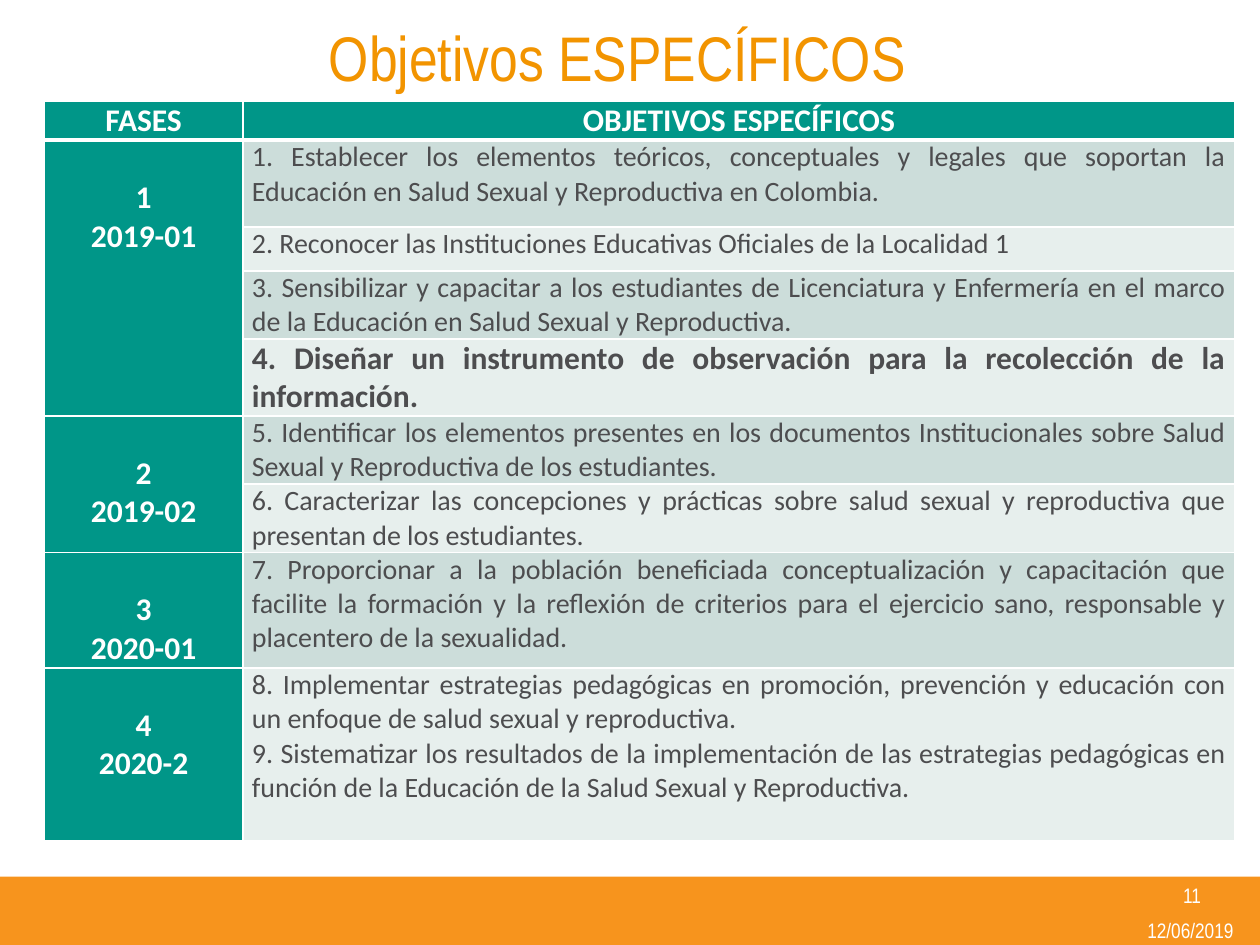
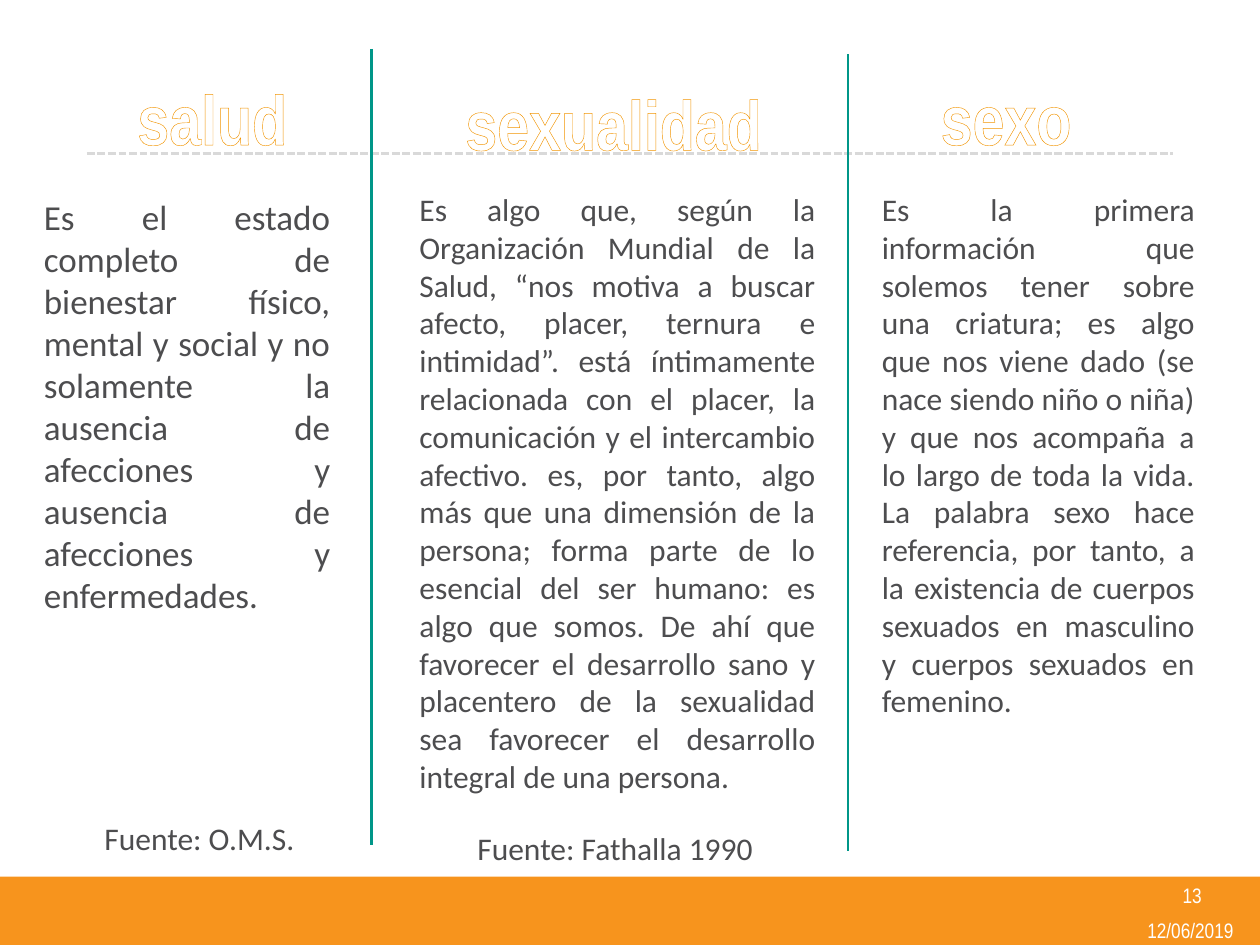
from lxml import etree
from pptx import Presentation
from pptx.dml.color import RGBColor
from pptx.enum.dml import MSO_LINE
from pptx.enum.shapes import MSO_CONNECTOR, MSO_SHAPE
from pptx.enum.text import MSO_ANCHOR, MSO_AUTO_SIZE, PP_ALIGN as Align
from pptx.oxml.ns import qn
from pptx.util import Pt

COLORS = {
    "orange": "F7941D",
    "title": "F29400",
    "teal": "009688",
    "dark_row": "CCDDDA",
    "light_row": "E7EFED",
    "text": "4D4D4F",
    "rule": "D9D9D9",
    "white": "FFFFFF",
}
TITLE_FONT = "Arial Narrow"
BODY_FONT = "Calibri"
DATE = "12/06/2019"
LINE_18 = 22  # height of one 18 pt line

PHASES = [
    (["1", "2019-01"], 4),
    (["2", "2019-02"], 2),
    (["3", "2020-01"], 1),
    (["4", "2020-2"], 1),
]
# Row height, paragraphs
OBJECTIVES = [
    (49.7, ["1. Establecer los elementos teóricos, conceptuales y legales que soportan la "
            "Educación en Salud Sexual y Reproductiva en Colombia."]),
    (25, ["2. Reconocer las Instituciones Educativas Oficiales de la Localidad 1"]),
    (39, ["3. Sensibilizar y capacitar a los estudiantes de Licenciatura y Enfermería en el "
          "marco de la Educación en Salud Sexual y Reproductiva."]),
    (44, ["4. Diseñar un instrumento de observación para la recolección de la información."]),
    (39, ["5. Identificar los elementos presentes en los documentos Institucionales sobre "
          "Salud Sexual y Reproductiva de los estudiantes."]),
    (39, ["6. Caracterizar las concepciones y prácticas sobre salud sexual y reproductiva que "
          "presentan de los estudiantes."]),
    (66, ["7. Proporcionar a la población beneficiada conceptualización y capacitación que "
          "facilite la formación y la reflexión de criterios para el ejercicio sano, "
          "responsable y placentero de la sexualidad."]),
    (99, ["8. Implementar estrategias pedagógicas en promoción, prevención y educación con un "
          "enfoque de salud sexual y reproductiva.",
          "9. Sistematizar los resultados de la implementación de las estrategias pedagógicas "
          "en función de la Educación de la Salud Sexual y Reproductiva."]),
]
HIGHLIGHTED_OBJECTIVE = 4

HEALTH = ("Es el estado completo de bienestar físico, mental y social y no solamente la "
          "ausencia de afecciones y ausencia de afecciones y enfermedades.")
SEXUALITY = ("Es algo que, según la Organización Mundial de la Salud, “nos motiva a buscar "
             "afecto, placer, ternura e intimidad”. está íntimamente relacionada con el placer, "
             "la comunicación y el intercambio afectivo. es, por tanto, algo más que una "
             "dimensión de la persona; forma parte de lo esencial del ser humano: es algo que "
             "somos. De ahí que favorecer el desarrollo sano y placentero de la sexualidad sea "
             "favorecer el desarrollo integral de una persona.")
SEX = ("Es la primera información que solemos tener sobre una criatura; es algo que nos viene "
       "dado (se nace siendo niño o niña) y que nos acompaña a lo largo de toda la vida. La "
       "palabra sexo hace referencia, por tanto, a la existencia de cuerpos sexuados en "
       "masculino y cuerpos sexuados en femenino.")


def rgb(name):
    return RGBColor.from_string(COLORS[name])


def add_line_xml(parent, tag, color, width, index):
    line = etree.Element(qn(tag), w=str(Pt(width)))
    fill = etree.SubElement(line, qn("a:solidFill"))
    etree.SubElement(fill, qn("a:srgbClr"), val=COLORS[color])
    parent.insert(index, line)


def write(frame, paragraphs, size=18, font=BODY_FONT, color="text", bold=False,
          align=Align.LEFT, outline=None):
    """Fill a text frame with equally formatted paragraphs."""
    for number, text in enumerate(paragraphs):
        para = frame.add_paragraph() if number else frame.paragraphs[0]
        para.alignment = align
        span = para.add_run()
        span.text = text
        span.font.size = Pt(size)
        span.font.name = font
        span.font.bold = bold
        span.font.color.rgb = rgb(color)
        if outline:
            add_line_xml(span.font._element, "a:ln", outline, 0.52, 0)


def add_text(page, text, area, anchor=MSO_ANCHOR.TOP, wrap=True, **style):
    box = page.shapes.add_textbox(*map(Pt, area))
    box.text_frame.word_wrap = wrap
    box.text_frame.vertical_anchor = anchor
    write(box.text_frame, [text], **style)


def set_title(page, text, area, **style):
    title = page.shapes.title
    title.left, title.top, title.width, title.height = map(Pt, area)
    frame = title.text_frame
    frame.auto_size = MSO_AUTO_SIZE.NONE
    frame.vertical_anchor = MSO_ANCHOR.MIDDLE
    write(frame, [text], font=TITLE_FONT, align=Align.CENTER, **style)


def add_line(page, start, end, color, dash=None):
    line = page.shapes.add_connector(MSO_CONNECTOR.STRAIGHT, *map(Pt, start + end))
    line.line.color.rgb = rgb(color)
    line.line.width = Pt(1.5)
    if dash:
        line.line.dash_style = dash
    etree.SubElement(line._element.spPr, qn("a:effectLst"))


def add_page(deck, number):
    """Add a title-only slide with the footer band, its number and the date."""
    page = deck.slides.add_slide(deck.slide_layouts[5])
    band = page.shapes.add_shape(MSO_SHAPE.RECTANGLE, 0, Pt(501), Pt(720), Pt(39))
    band.shadow.inherit = False
    band.fill.solid()
    band.fill.fore_color.rgb = rgb("orange")
    band.line.fill.background()
    for text, area in ((DATE, (642, 524, 76.5, 15.5)), (str(number), (643.5, 500.5, 75.5, 21.5))):
        add_text(page, text, area, anchor=MSO_ANCHOR.MIDDLE, size=12, font=TITLE_FONT,
                 color="white", align=Align.CENTER)
    return page


def format_cell(cell, paragraphs, fill, top=0, bottom_border=1, **style):
    cell.margin_left = cell.margin_right = Pt(5)
    cell.margin_top, cell.margin_bottom = Pt(top), 0
    properties = cell._tc.get_or_add_tcPr()
    for index, side in enumerate("LRTB"):
        width = bottom_border if side == "B" else 1
        add_line_xml(properties, f"a:ln{side}", "white", width, index)
    cell.fill.solid()
    cell.fill.fore_color.rgb = rgb(fill)
    write(cell.text_frame, paragraphs, **style)


def add_objectives_table(page):
    heights = [22.3] + [height for height, _ in OBJECTIVES]
    frame = page.shapes.add_table(len(heights), 2, Pt(25.2), Pt(57.8), Pt(680.4),
                                  Pt(sum(heights)))
    table = frame.table
    for column, width in zip(table.columns, (113.8, 566.6)):
        column.width = Pt(width)
    for row, height in zip(table.rows, heights):
        row.height = Pt(height)

    heading = dict(fill="teal", color="white", bold=True, align=Align.CENTER)
    for column, text in enumerate(("FASES", "OBJETIVOS ESPECÍFICOS")):
        format_cell(table.cell(0, column), [text], bottom_border=3, **heading)

    first = 1
    for lines, span in PHASES:
        cell = table.cell(first, 0)
        if span > 1:
            cell.merge(table.cell(first + span - 1, 0))
        format_cell(cell, lines, top=LINE_18, **heading)
        first += span

    for row, (_, paragraphs) in enumerate(OBJECTIVES, start=1):
        highlighted = row == HIGHLIGHTED_OBJECTIVE
        format_cell(table.cell(row, 1), paragraphs, "dark_row" if row % 2 else "light_row",
                    size=18 if highlighted else 16, bold=highlighted, align=Align.JUSTIFY)


def build_objectives(deck):
    page = add_page(deck, 11)
    set_title(page, "Objetivos ESPECÍFICOS", (42.5, -7, 620.6, 77.8), size=36, color="title")
    add_objectives_table(page)


def build_definitions(deck):
    page = add_page(deck, 13)
    add_line(page, (49.7, 87.8), (670.3, 87.8), "rule", MSO_LINE.SQUARE_DOT)

    heading = dict(size=40, color="white", bold=True, outline="title")
    set_title(page, "salud", (19.4, 28, 203.8, 77.8), **heading)
    for text, area in (("sexualidad", (40.3, 31, 620.6, 77.8)), ("sexo", (473, 28, 203.8, 77.8))):
        add_text(page, text, area, anchor=MSO_ANCHOR.MIDDLE, font=TITLE_FONT,
                 align=Align.CENTER, **heading)

    for text, area, size in (
        (HEALTH, (18, 108, 177.8, 250), 20),
        (SEXUALITY, (232.6, 105, 240.5, 356.4), 18),
        (SEX, (496.8, 105, 193, 334), 18),
    ):
        add_text(page, text, area, size=size, align=Align.JUSTIFY)

    add_text(page, "Fuente: O.M.S.", (52.6, 464.4, 128.2, 29), wrap=False)
    add_text(page, "Fuente: Fathalla 1990", (265.7, 470, 173.5, 29), wrap=False)
    for x, top in ((212.4, 28), (484.6, 31)):
        add_line(page, (x, top), (x, top + 455), "teal")


def main():
    deck = Presentation()
    deck.slide_width, deck.slide_height = Pt(720), Pt(540)
    build_objectives(deck)
    build_definitions(deck)
    deck.save("out.pptx")


if __name__ == "__main__":
    main()
